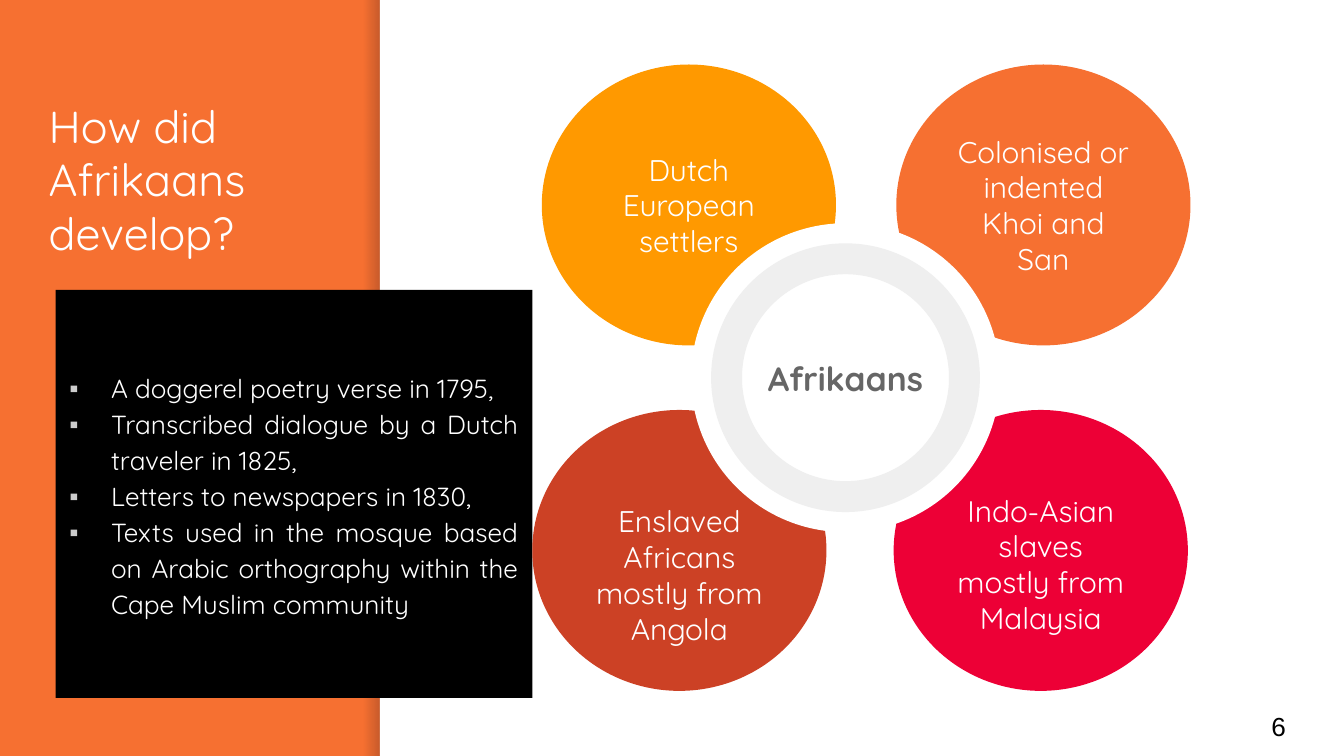
"""Build the slide on how Afrikaans developed."""
from lxml import etree
from pptx import Presentation
from pptx.dml.color import RGBColor
from pptx.enum.shapes import MSO_SHAPE
from pptx.enum.text import MSO_ANCHOR, MSO_AUTO_SIZE, PP_ALIGN
from pptx.oxml.ns import qn
from pptx.util import Cm, Pt

RECTANGLE, OVAL, DONUT = MSO_SHAPE.RECTANGLE, MSO_SHAPE.OVAL, MSO_SHAPE.DONUT
TOP, MIDDLE = MSO_ANCHOR.TOP, MSO_ANCHOR.MIDDLE
LEFT, CENTER, JUSTIFY = PP_ALIGN.LEFT, PP_ALIGN.CENTER, PP_ALIGN.JUSTIFY
NO_AUTOFIT = MSO_AUTO_SIZE.NONE

WHITE = RGBColor(0xFF, 0xFF, 0xFF)
BLACK = RGBColor(0x00, 0x00, 0x00)
SHADE = RGBColor(0x00, 0x00, 0x14)
ORANGE = RGBColor(0xF6, 0x70, 0x31)
AMBER = RGBColor(0xFF, 0x99, 0x00)
BRICK = RGBColor(0xCC, 0x41, 0x25)
CRIMSON = RGBColor(0xED, 0x00, 0x36)
PALE_GREY = RGBColor(0xEF, 0xEF, 0xEF)
BULLET_GREY = RGBColor(0xCC, 0xCC, 0xCC)
DARK_GREY = RGBColor(0x66, 0x66, 0x66)

MARGIN = 0.26
SOURCES = [
    ("Dutch European settlers", 10.24, 1.22, AMBER, MARGIN, MARGIN),
    ("Colonised or indented Khoi and San", 16.94, 1.22, ORANGE, MARGIN, MARGIN),
    ("Enslaved Africans mostly from Angola", 10.06, 7.75, BRICK, 0.91, 0),
    ("Indo-Asian slaves mostly from Malaysia", 16.89, 7.75, CRIMSON, 0.64, 0.13),
]
EVIDENCE = [
    "A doggerel poetry verse in 1795,",
    "Transcribed dialogue by a Dutch traveler in 1825,",
    "Letters to newspapers in 1830,",
    "Texts used in the mosque based on Arabic orthography within the Cape Muslim community",
]


def add_block(preset, left, top, width, height, color):
    block = slide.shapes.add_shape(preset, Cm(left), Cm(top), Cm(width), Cm(height))
    block.shadow.inherit = False
    block.fill.solid()
    block.fill.fore_color.rgb = color
    block.line.fill.background()
    return block


def format_text(holder, size, color, align, anchor, font="Quicksand", bold=False):
    frame = holder.text_frame
    frame.word_wrap = True
    frame.auto_size = NO_AUTOFIT
    frame.vertical_anchor = anchor
    frame.margin_left = frame.margin_right = Cm(MARGIN)
    frame.margin_top = frame.margin_bottom = Cm(MARGIN)
    for paragraph in frame.paragraphs:
        paragraph.alignment = align
        for run in paragraph.runs:
            run.font.name = font
            run.font.size = Pt(size)
            run.font.bold = bold
            run.font.color.rgb = color


prs = Presentation()
prs.slide_width, prs.slide_height = Cm(25.4), Cm(14.29)
slide = prs.slides.add_slide(prs.slide_layouts[1])
slide.background.fill.solid()
slide.background.fill.fore_color.rgb = ORANGE

title, evidence = slide.placeholders
panel_edge = add_block(RECTANGLE, 6.87, 0, 0.31, 14.29, SHADE)
panel_edge.fill.gradient()
panel_edge.fill.gradient_angle = 0
for stop, opacity in zip(panel_edge.fill.gradient_stops, (0, 20)):
    stop.color.rgb = SHADE
for tint, opacity in zip(panel_edge.element.spPr.iter(qn("a:srgbClr")), (0, 20)):
    etree.SubElement(tint, qn("a:alpha"), val=str(opacity * 1000))
panel = add_block(RECTANGLE, 7.18, 0, 18.22, 14.29, WHITE)
for backdrop in (panel_edge, panel):
    title.element.addprevious(backdrop.element)

title.left, title.top, title.width, title.height = Cm(0.66), Cm(1.6), Cm(5.69), Cm(11.05)
title.text_frame.text = "How did Afrikaans develop?"
format_text(title, 24, WHITE, LEFT, TOP)

page_number = slide.shapes.add_textbox(Cm(23.77), Cm(13.18), Cm(1.52), Cm(1.09))
page_number.text_frame.text = "6"
format_text(page_number, 14, BLACK, LEFT, MIDDLE, font="Arial")

for origin, left, top, color, space_above, space_below in SOURCES:
    circle = add_block(OVAL, left, top, 5.56, 5.31, color)
    circle.text_frame.text = origin
    format_text(circle, 16, WHITE, CENTER, MIDDLE)
    circle.text_frame.margin_top = Cm(space_above)
    circle.text_frame.margin_bottom = Cm(space_below)

hub = add_block(OVAL, 13.06, 4.22, 5.84, 5.84, WHITE)
hub.text_frame.text = "Afrikaans"
format_text(hub, 18, DARK_GREY, CENTER, MIDDLE, bold=True)
hub_ring = add_block(DONUT, 13.44, 4.6, 5.08, 5.08, PALE_GREY)
hub_ring.adjustments[0] = 0.115

evidence.left, evidence.top, evidence.width, evidence.height = Cm(1.05), Cm(5.48), Cm(9.01), Cm(7.71)
evidence.fill.solid()
evidence.fill.fore_color.rgb = BLACK
evidence.text_frame.text = "\n".join(EVIDENCE)
format_text(evidence, 14, WHITE, JUSTIFY, MIDDLE)
for item in evidence.text_frame.paragraphs:
    item.line_spacing = 1.15
    item.space_before = Pt(0)
    properties = item._p.get_or_add_pPr()
    properties.set("marL", str(Cm(0.79)))
    properties.set("indent", str(-Cm(0.79)))
    bullet_color = etree.SubElement(properties, qn("a:buClr"))
    etree.SubElement(bullet_color, qn("a:srgbClr"), val=str(BULLET_GREY))
    etree.SubElement(properties, qn("a:buChar"), char="▪")

prs.save("out.pptx")
